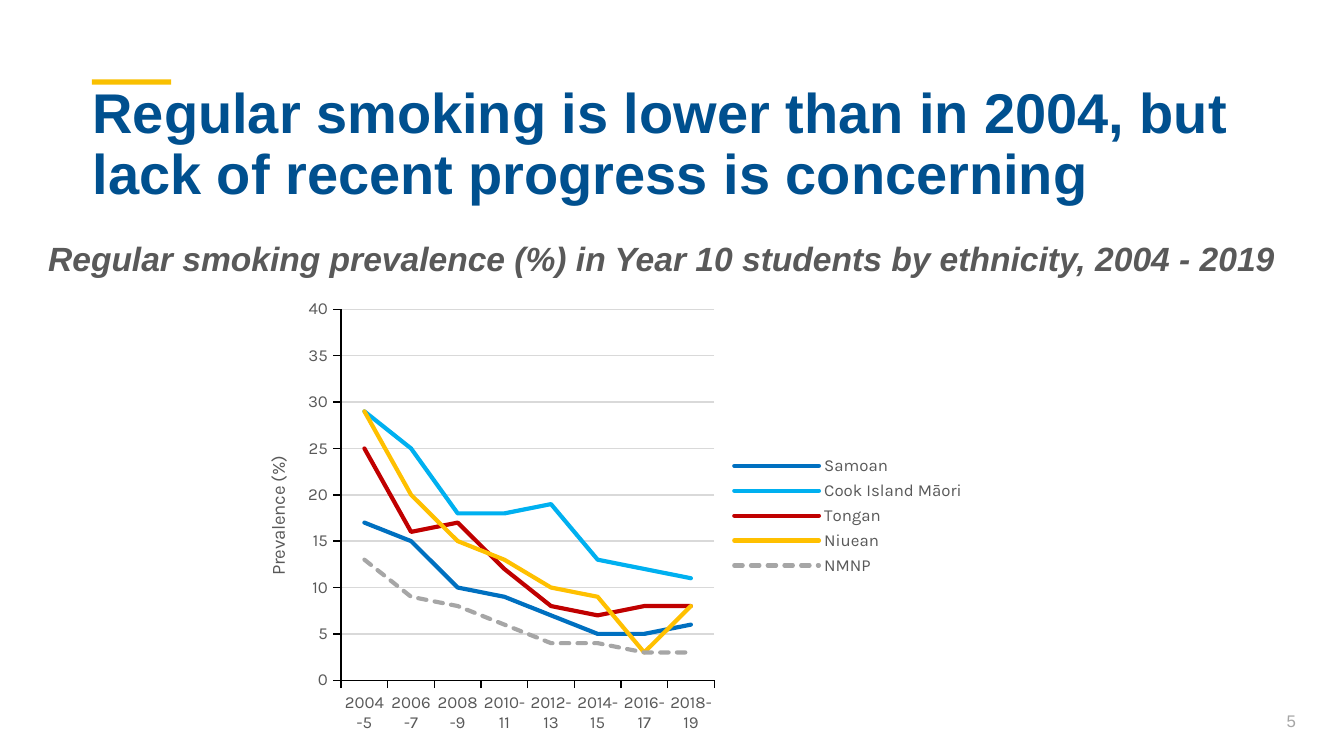
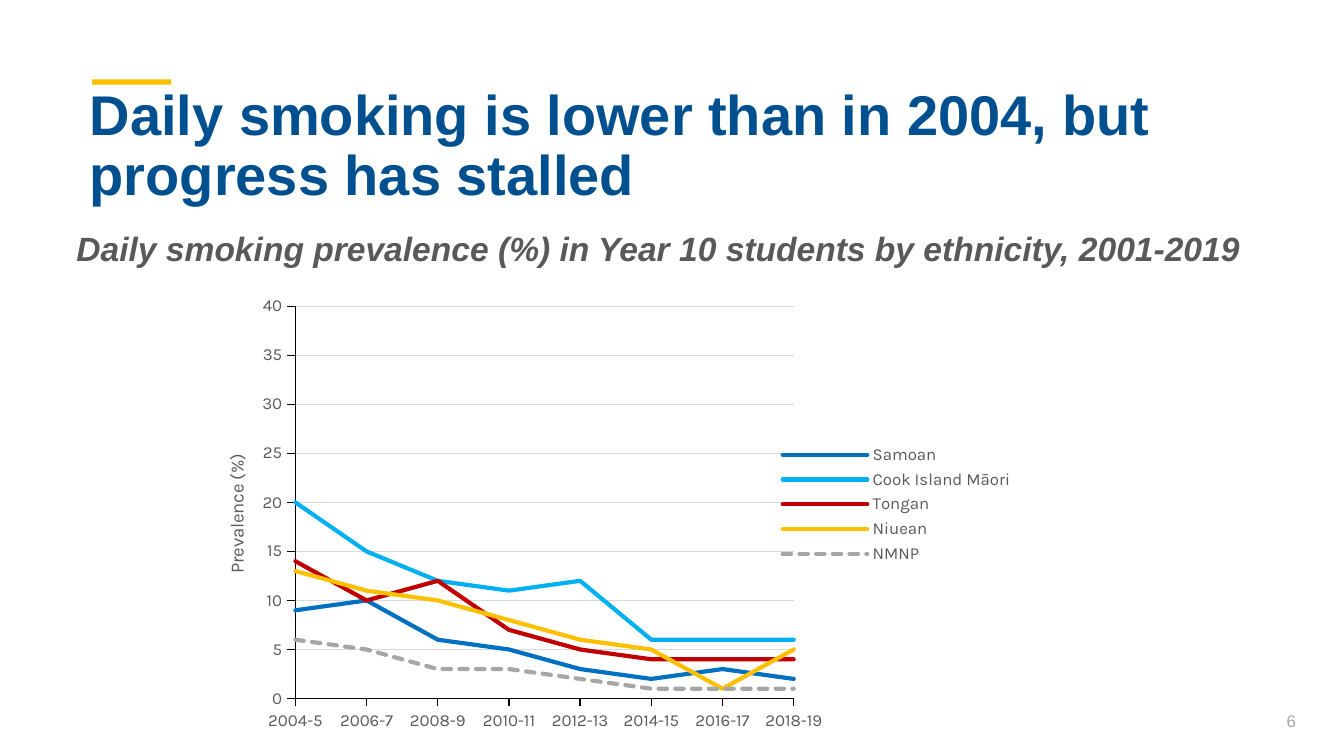
import pptx
import pptx.chart.data
import pptx.dml.color
import pptx.enum.chart
import pptx.enum.dml
import pptx.enum.shapes
import pptx.enum.text
import pptx.oxml.ns
import pptx.util
from dataclasses import dataclass
from lxml import etree

Pt = pptx.util.Pt
RGB = pptx.dml.color.RGBColor.from_string
qn = pptx.oxml.ns.qn
XL = pptx.enum.chart


@dataclass(frozen=True)
class Theme:
    accent: str = "F9C000"
    title: str = "00508F"
    text: str = "595959"
    number: str = "A6A6A6"
    axis: str = "000000"
    grid: str = "D9D9D9"
    paper: str = "FFFFFF"
    font: str = "Arial"
    chart_font: str = "Karla"
    title_pt: int = 30
    subtitle_pt: int = 18
    small_pt: int = 9
    axis_title_pt: int = 10
    line_pt: float = 2.25
    axis_pt: float = 0.75


T = Theme()

prs = pptx.Presentation()
prs.slide_width = Pt(720)
prs.slide_height = Pt(405)


def area(left, top, width, height):
    """Turn percentages of the slide's size into lengths."""
    W, H = prs.slide_width, prs.slide_height
    return [int(share * full / 100)
            for share, full in zip((left, top, width, height), (W, H, W, H))]


def place(parent, index, **shares):
    """Give a chart part a manual layout, in percentages of the chart's size."""
    layout = parent.find(qn("c:layout"))
    if layout is None:
        layout = etree.Element(qn("c:layout"))
        parent.insert(index, layout)
    manual = etree.SubElement(layout, qn("c:manualLayout"))
    if "w" in shares:
        etree.SubElement(manual, qn("c:layoutTarget")).set("val", "inner")
    for mode in ("xMode", "yMode"):
        etree.SubElement(manual, qn("c:" + mode)).set("val", "edge")
    for name, value in shares.items():
        etree.SubElement(manual, qn("c:" + name)).set("val", f"{value / 100:.3f}")


PERIODS = ["2004-5", "2006-7", "2008-9", "2010-11",
           "2012-13", "2014-15", "2016-17", "2018-19"]
GROUPS = {"Samoan": "0070C0", "Cook Island Māori": "00B0F0",
          "Tongan": "C00000", "Niuean": "FFC000", "NMNP": "A6A6A6"}

SLIDES = [
    dict(number=5,
         title="Regular smoking is lower than in 2004, but lack of recent progress is concerning",
         title_at=(5.9, 15.66, 87.2, 7.3),
         subtitle="Regular smoking prevalence (%) in Year 10 students by ethnicity, 2004 - 2019",
         subtitle_at=(2.6, 31.14, 94, 4.98),
         chart_at=(17.6, 38.43, 55.2, 59.56),
         plot=dict(x=14.1, y=4.2, w=50.3, h=82.4),
         axis_title=dict(x=3.5, y=36), crossing="between",
         prevalence=[[17, 15, 10, 9, 7, 5, 5, 6],
                     [29, 25, 18, 18, 19, 13, 12, 11],
                     [25, 16, 17, 12, 8, 7, 8, 8],
                     [29, 20, 15, 13, 10, 9, 3, 8],
                     [13, 9, 8, 6, 4, 4, 3, 3]]),
    dict(number=6,
         title="Daily smoking is lower than in 2004, but progress has stalled",
         title_at=(5.7, 15.84, 87.2, 7.3),
         subtitle="Daily smoking prevalence (%) in Year 10 students by ethnicity, 2001-2019",
         subtitle_at=(4.7, 29.89, 89.8, 6.05),
         chart_at=(16.4, 37.16, 60, 59.56),
         plot=dict(x=9.3, y=5.7, w=61.8, h=87.8),
         axis_title=dict(x=0.1, y=38.2), crossing="midCat",
         prevalence=[[9, 10, 6, 5, 3, 2, 3, 2],
                     [20, 15, 12, 11, 12, 6, 6, 6],
                     [14, 10, 12, 7, 5, 4, 4, 4],
                     [13, 11, 10, 8, 6, 5, 1, 5],
                     [6, 5, 3, 3, 2, 1, 1, 1]]),
]

ANCHOR = pptx.enum.text.MSO_ANCHOR
ALIGN = pptx.enum.text.PP_ALIGN

for page in SLIDES:
    s = prs.slides.add_slide(prs.slide_layouts[6])

    # Accent bar
    bar = s.shapes.add_shape(pptx.enum.shapes.MSO_SHAPE.RECTANGLE,
                             *area(6.83, 10.5, 5.9, 0.7))
    bar.shadow.inherit = False
    bar.fill.solid()
    bar.fill.fore_color.rgb = RGB(T.accent)
    bar.line.fill.background()

    # Title, subtitle and slide number
    for text, at, size, colour, bold, italic, anchor, align, spacing, before in (
        (page["title"], page["title_at"], T.title_pt, T.title,
         True, False, ANCHOR.MIDDLE, ALIGN.LEFT, 0.9, 0),
        (page["subtitle"], page["subtitle_at"], T.subtitle_pt, T.text,
         True, True, ANCHOR.TOP, ALIGN.LEFT, 0.9, 7.5),
        (str(page["number"]), (74.9, 92.7, 22.5, 5.34), T.small_pt, T.number,
         False, False, ANCHOR.MIDDLE, ALIGN.RIGHT, 1.0, 0),
    ):
        sp = s.shapes.add_textbox(*area(*at))
        tf = sp.text_frame
        tf.word_wrap = True
        tf.vertical_anchor = anchor
        tf.text = text
        p = tf.paragraphs[0]
        p.alignment = align
        p.line_spacing = spacing
        p.space_before = Pt(before)
        font = p.runs[0].font
        font.name, font.size, font.bold, font.italic = T.font, Pt(size), bold, italic
        font.color.rgb = RGB(colour)

    # Prevalence chart
    data = pptx.chart.data.CategoryChartData(number_format="0")
    data.categories = PERIODS
    for group, prevalence in zip(GROUPS, page["prevalence"]):
        data.add_series(group, prevalence)
    chart = s.shapes.add_chart(XL.XL_CHART_TYPE.LINE, *area(*page["chart_at"]), data).chart
    chart.has_title = False
    chart.font.name = T.chart_font
    chart.font.size = Pt(T.axis_title_pt)
    chart.font.color.rgb = RGB(T.axis)

    space = chart.element
    paper = etree.Element(qn("c:spPr"))
    fill = etree.SubElement(paper, qn("a:solidFill"))
    etree.SubElement(fill, qn("a:srgbClr")).set("val", T.paper)
    space.find(qn("c:txPr")).addprevious(paper)

    chart.has_legend = True
    chart.legend.position = XL.XL_LEGEND_POSITION.RIGHT
    chart.legend.include_in_layout = False

    for axis in (chart.category_axis, chart.value_axis):
        axis.major_tick_mark = XL.XL_TICK_MARK.OUTSIDE
        axis.minor_tick_mark = XL.XL_TICK_MARK.NONE
        axis.format.line.color.rgb = RGB(T.axis)
        axis.format.line.width = Pt(T.axis_pt)

    values = chart.value_axis
    values.minimum_scale, values.maximum_scale, values.major_unit = 0, 40, 5
    values.tick_labels.number_format = "0"
    values.tick_labels.number_format_is_linked = False
    values.has_major_gridlines = True
    values.major_gridlines.format.line.color.rgb = RGB(T.grid)
    values.major_gridlines.format.line.width = Pt(T.axis_pt)
    values.axis_title.text_frame.text = "Prevalence (%)"
    title_font = values.axis_title.text_frame.paragraphs[0].runs[0].font
    title_font.bold = False

    for font, size in ((chart.legend.font, T.small_pt),
                       (chart.category_axis.tick_labels.font, T.small_pt),
                       (values.tick_labels.font, T.small_pt),
                       (title_font, T.axis_title_pt)):
        font.name, font.size = T.chart_font, Pt(size)
        font.color.rgb = RGB(T.text)

    for ser, colour in zip(chart.plots[0].series, GROUPS.values()):
        ser.smooth = False
        line = ser.format.line
        line.color.rgb = RGB(colour)
        line.width = Pt(T.line_pt)
        if ser.name == "NMNP":
            line.dash_style = pptx.enum.dml.MSO_LINE.SQUARE_DOT
        ser.format.element.find(".//" + qn("a:ln")).set("cap", "rnd") \
            if hasattr(ser.format, "element") else line._get_or_add_ln().set("cap", "rnd")

    plot_area = space.find(".//" + qn("c:plotArea"))
    place(plot_area, 0, **page["plot"])
    value_element = plot_area.find(qn("c:valAx"))
    place(value_element.find(qn("c:title")), 1, **page["axis_title"])
    crossing = value_element.find(qn("c:crossBetween"))
    if crossing is None:
        crossing = etree.Element(qn("c:crossBetween"))
        value_element.find(qn("c:majorUnit")).addprevious(crossing)
    crossing.set("val", page["crossing"])

prs.save("out.pptx")
